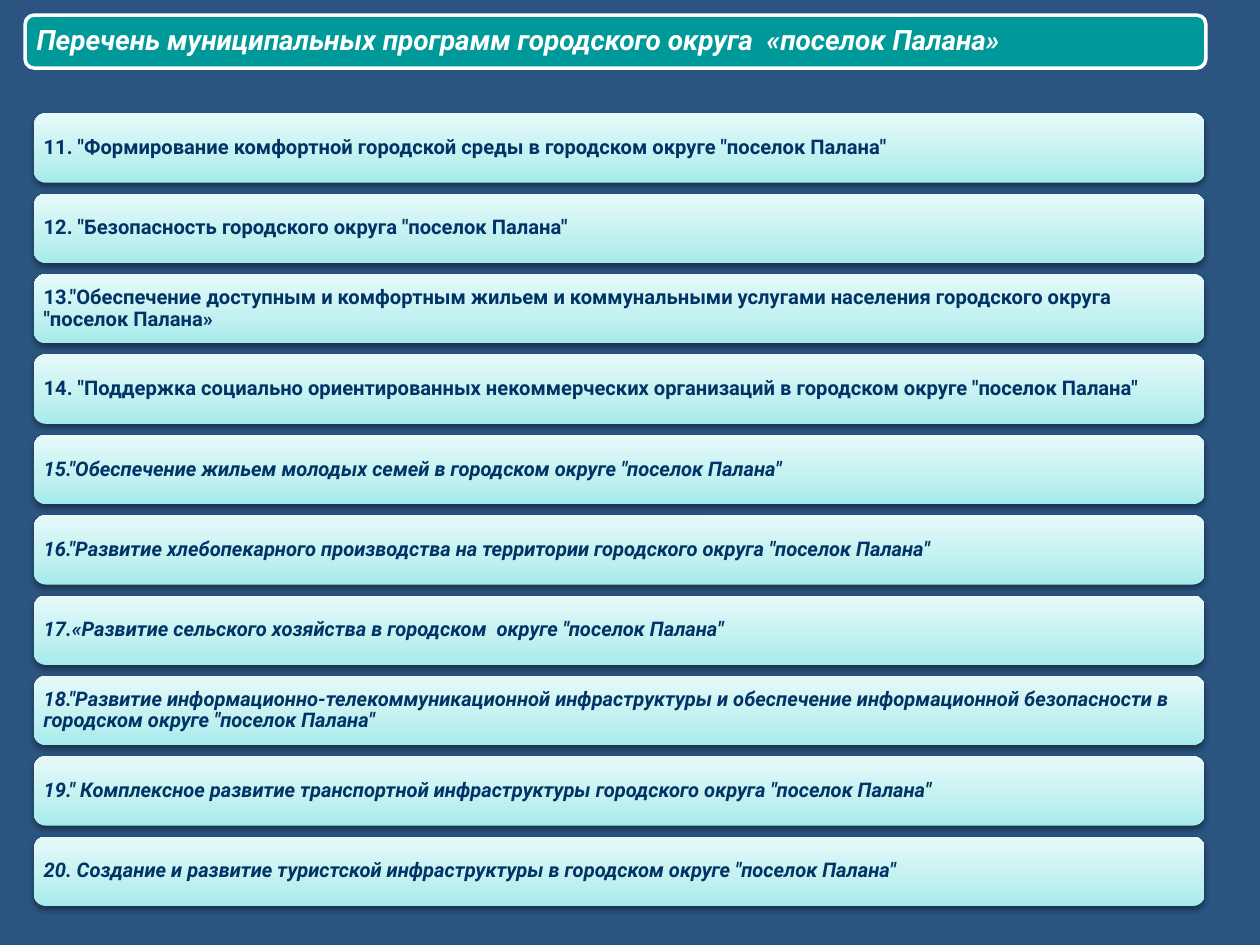
from copy import deepcopy
from dataclasses import dataclass

from lxml import etree
from pptx import Presentation
from pptx.dml.color import RGBColor
from pptx.enum.shapes import MSO_SHAPE
from pptx.enum.text import MSO_ANCHOR, PP_ALIGN
from pptx.oxml.ns import qn
from pptx.util import Inches, Pt

ROUND = MSO_SHAPE.ROUNDED_RECTANGLE
MIDDLE = MSO_ANCHOR.MIDDLE
LEFT = PP_ALIGN.LEFT


@dataclass(frozen=True)
class Theme:
    font: str = "Roboto"
    background: str = "2B5481"
    banner: str = "009999"
    light: str = "FFFFFF"
    dark: str = "003366"
    gradient: tuple = ((0, "A5EBEB"), (0.35, "C1F0F0"), (1, "E7FAFA"))
    title_size: float = 16
    item_size: float = 11.5


@dataclass(frozen=True)
class Box:
    left: float
    top: float
    width: float
    height: float


@dataclass(frozen=True)
class Program:
    text: str
    italic: bool = True


@dataclass(frozen=True)
class Column:
    left: float
    first_top: float
    last_top: float
    width: float
    row_height: float

    def row(self, index: int, count: int) -> Box:
        pitch = (self.last_top - self.first_top) / (count - 1)
        return Box(self.left, self.first_top + index * pitch, self.width, self.row_height)


THEME = Theme()
TITLE = "Перечень муниципальных программ городского округа  «поселок Палана»"
TITLE_BOX = Box(0.2, 0.12, 9.37, 0.42)
COLUMN = Column(0.27, 0.9, 6.64, 9.29, 0.55)
PROGRAMS = (
    Program('11. "Формирование комфортной городской среды в городском округе "поселок Палана"', False),
    Program('12. "Безопасность городского округа "поселок Палана"', False),
    Program('13."Обеспечение доступным и комфортным жильем и коммунальными услугами '
            'населения городского округа "поселок Палана»', False),
    Program('14. "Поддержка социально ориентированных некоммерческих организаций '
            'в городском округе "поселок Палана"', False),
    Program('15."Обеспечение жильем молодых семей в городском округе "поселок Палана"'),
    Program('16."Развитие хлебопекарного производства на территории городского округа "поселок Палана"'),
    Program('17.«Развитие сельского хозяйства в городском  округе "поселок Палана"'),
    Program('18."Развитие информационно-телекоммуникационной инфраструктуры и обеспечение '
            'информационной безопасности в городском округе "поселок Палана"'),
    Program('19." Комплексное развитие транспортной инфраструктуры городского округа "поселок Палана"'),
    Program('20. Создание и развитие туристской инфраструктуры в городском округе "поселок Палана"'),
)


def rgb(value: str) -> RGBColor:
    return RGBColor.from_string(value)


def add_bar(s, box: Box, text: str, size: float, color: str, italic: bool, inset: float):
    sp = s.shapes.add_shape(ROUND, Inches(box.left), Inches(box.top),
                            Inches(box.width), Inches(box.height))
    sp.shadow.inherit = False
    tf = sp.text_frame
    margins = {f"margin_{side}": Inches(inset) for side in ("left", "top", "right", "bottom")}
    for name, value in {"word_wrap": True, "vertical_anchor": MIDDLE, **margins}.items():
        setattr(tf, name, value)
    p = tf.paragraphs[0]
    p.alignment = LEFT
    p.line_spacing = 0.9
    r = p.add_run()
    r.text = text
    font = {"name": THEME.font, "size": Pt(size), "bold": True, "italic": italic}
    for name, value in font.items():
        setattr(r.font, name, value)
    r.font.color.rgb = rgb(color)
    return sp


def fill_gradient(sp) -> None:
    sp.fill.gradient()
    sp.fill.gradient_angle = 90
    stops = sp._element.spPr.find(qn("a:gradFill")).find(qn("a:gsLst"))
    stops.append(deepcopy(stops[-1]))
    for stop, (position, color) in zip(sp.fill.gradient_stops, THEME.gradient):
        stop.color.rgb = rgb(color)
        stop.position = position


def add_shadow(sp) -> None:
    effects = sp._element.spPr.find(qn("a:effectLst"))
    shadow = etree.SubElement(effects, qn("a:outerShdw"), blurRad=str(Pt(3.1)),
                              dist=str(Pt(1.6)), dir="5400000", rotWithShape="0")
    color = etree.SubElement(shadow, qn("a:srgbClr"), val="000000")
    etree.SubElement(color, qn("a:alpha"), val="38000")


def add_title(s) -> None:
    sp = add_bar(s, TITLE_BOX, TITLE, THEME.title_size, THEME.light, True, 0.07)
    sp.fill.solid()
    sp.fill.fore_color.rgb = rgb(THEME.banner)
    sp.line.color.rgb = rgb(THEME.light)
    sp.line.width = Pt(2)


def add_program(s, box: Box, program: Program) -> None:
    sp = add_bar(s, box, program.text, THEME.item_size, THEME.dark, program.italic, 0.05)
    fill_gradient(sp)
    sp.line.fill.background()
    add_shadow(sp)


def main() -> None:
    prs = Presentation()
    prs.slide_width, prs.slide_height = Inches(10), Inches(7.5)
    s = prs.slides.add_slide(prs.slide_layouts[6])
    s.background.fill.solid()
    s.background.fill.fore_color.rgb = rgb(THEME.background)
    for index, program in enumerate(PROGRAMS):
        add_program(s, COLUMN.row(index, len(PROGRAMS)), program)
    add_title(s)
    prs.save("out.pptx")


if __name__ == "__main__":
    main()
